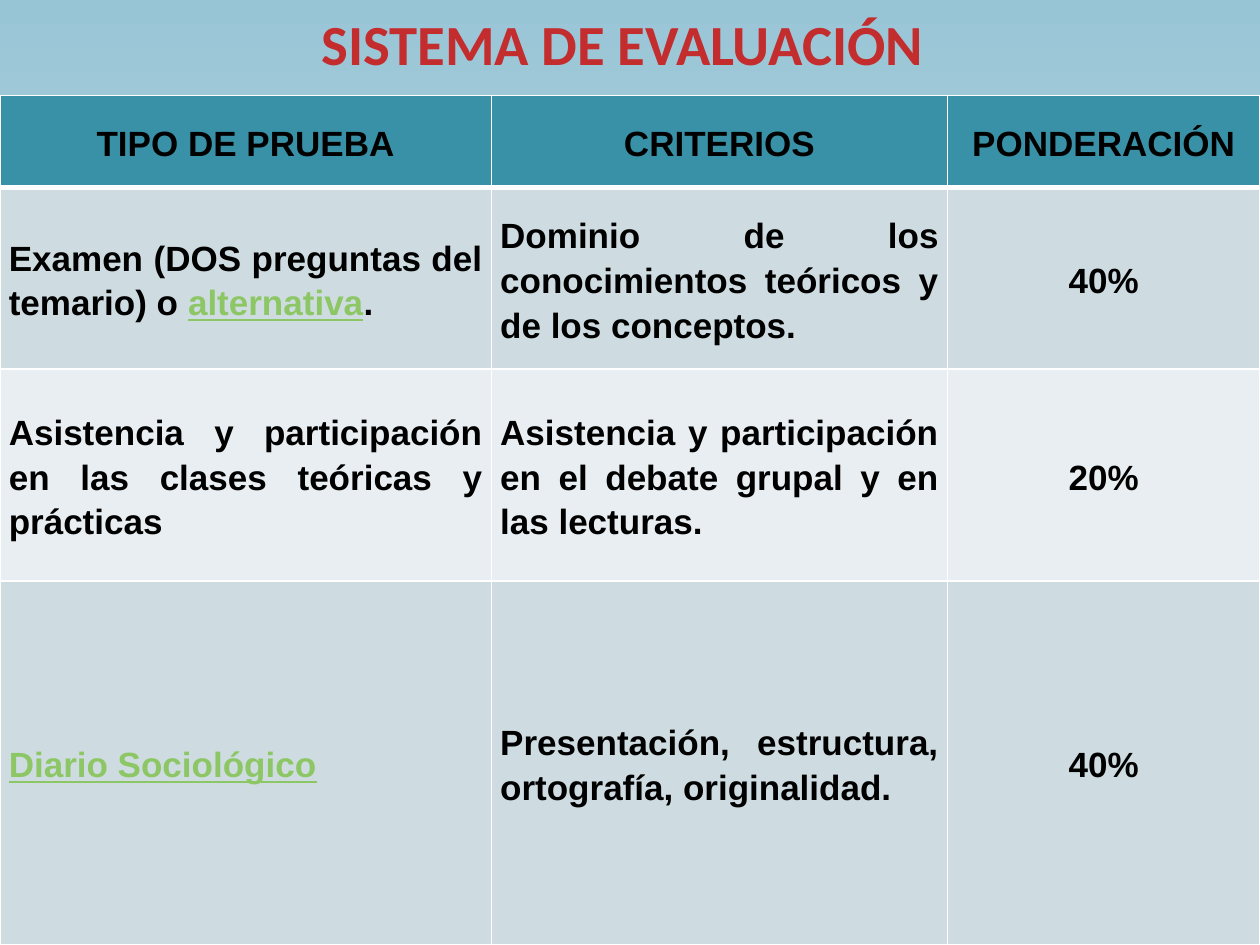
from copy import deepcopy
from dataclasses import dataclass

from pptx import Presentation
from pptx.dml.color import RGBColor
from pptx.enum.text import MSO_ANCHOR, PP_ALIGN
from pptx.oxml import parse_xml
from pptx.oxml.ns import nsdecls, qn
from pptx.util import Inches, Pt


@dataclass(frozen=True)
class Theme:
    sky: tuple = ("98C5D6", "C1DAE4", "E1ECF1")
    title: str = "C32D2E"
    text: str = "000000"
    link: str = "8DC765"
    header: str = "3891A7"
    bands: tuple = ("CEDCE1", "E8EEF1")
    border: str = "FFFFFF"
    title_font: str = "Calibri"
    body_font: str = "Arial"
    title_size: float = 32.4
    body_size: float = 20


THEME = Theme()
COLS = (3.9, 3.62, 2.48)
ROWS = (0.73, 1.44, 1.68, 2.89)
LINKS = ("alternativa", "Diario Sociológico")
CELLS = (
    (("TIPO DE PRUEBA",), ("CRITERIOS",), ("PONDERACIÓN",)),
    (("Examen (DOS preguntas del temario) o ", "alternativa", "."),
     ("Dominio de los conocimientos teóricos y de los conceptos.",), ("40%",)),
    (("Asistencia y participación en las clases teóricas y prácticas",),
     ("Asistencia y participación en el debate grupal y en las lecturas.",), ("20%",)),
    (("Diario Sociológico",),
     ("Presentación, estructura, ortografía, originalidad.",), ("40%",)),
)


def rgb(value):
    return RGBColor.from_string(value)


def paint_background(s):
    fill = s.background.fill
    fill.gradient()
    fill.gradient_angle = 270
    stops = s.element.find(".//" + qn("a:gsLst"))
    stops.insert(1, deepcopy(stops[0]))
    for i, (stop, color) in enumerate(zip(fill.gradient_stops, THEME.sky)):
        stop.position = i / 2
        stop.color.rgb = rgb(color)


def add_title(s, x, y, w, h):
    tf = s.shapes.add_textbox(x, y, w, h).text_frame
    tf.word_wrap = True
    tf.vertical_anchor = MSO_ANCHOR.MIDDLE
    tf.margin_right = Inches(0.22)
    p = tf.paragraphs[0]
    p.text = "SISTEMA DE EVALUACIÓN"
    p.alignment = PP_ALIGN.CENTER
    p.font.name = THEME.title_font
    p.font.size = Pt(THEME.title_size)
    p.font.bold = True
    p.font.color.rgb = rgb(THEME.title)


def set_borders(cell, bottom):
    tcPr = cell._tc.get_or_add_tcPr()
    widths = {"lnL": 1, "lnR": 1, "lnT": 1, "lnB": bottom}
    for i, (tag, width) in enumerate(widths.items()):
        tcPr.insert(i, parse_xml(
            f'<a:{tag} {nsdecls("a")} w="{Pt(width)}"><a:solidFill>'
            f'<a:srgbClr val="{THEME.border}"/></a:solidFill></a:{tag}>'))


def fill_cell(cell, runs, color, align, bottom):
    cell.fill.solid()
    cell.fill.fore_color.rgb = rgb(color)
    cell.vertical_anchor = MSO_ANCHOR.MIDDLE
    cell.margin_left = cell.margin_right = Inches(0.07)
    cell.margin_top = cell.margin_bottom = 0
    set_borders(cell, bottom)
    p = cell.text_frame.paragraphs[0]
    p.alignment = align
    p.line_spacing = 1.15
    p.font.name = THEME.body_font
    p.font.size = Pt(THEME.body_size)
    p.font.bold = True
    for text in runs:
        r = p.add_run()
        r.text = text
        is_link = text in LINKS
        r.font.color.rgb = rgb(THEME.link if is_link else THEME.text)
        r.font.underline = is_link


def add_grading_table(s, x, y, w, h):
    table = s.shapes.add_table(len(ROWS), len(COLS), x, y, w, h).table
    for col, width in zip(table.columns, COLS):
        col.width = int(w * width / sum(COLS))
    for row, height in zip(table.rows, ROWS):
        row.height = int(h * height / sum(ROWS))
    for i, row in enumerate(CELLS):
        color = THEME.bands[(i - 1) % 2] if i else THEME.header
        for j, runs in enumerate(row):
            centred = i == 0 or j == 2
            align = PP_ALIGN.CENTER if centred else PP_ALIGN.JUSTIFY
            fill_cell(table.cell(i, j), runs, color, align, 1 if i else 3)


def main():
    prs = Presentation()
    prs.slide_width, prs.slide_height = Inches(10), Inches(7.5)
    s = prs.slides.add_slide(prs.slide_layouts[6])
    paint_background(s)
    add_title(s, 0, 0, Inches(10), Inches(0.68))
    add_grading_table(s, 0, Inches(0.76), Inches(10), Inches(6.74))
    prs.save("out.pptx")


if __name__ == "__main__":
    main()
